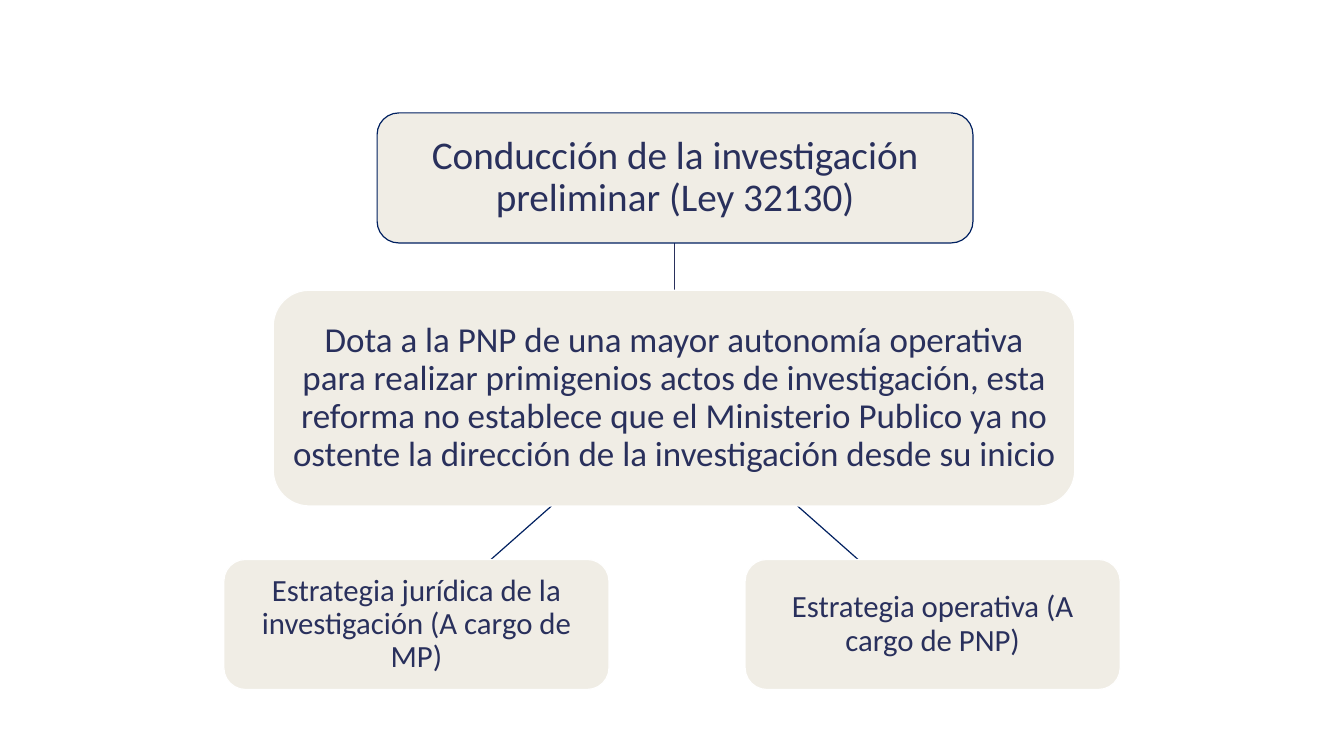
from pptx import Presentation
from pptx.dml.color import RGBColor
from pptx.enum.shapes import MSO_CONNECTOR as Link, MSO_SHAPE as Shape
from pptx.enum.text import MSO_ANCHOR as Anchor, PP_ALIGN as Align
from pptx.util import Inches, Pt
from lxml import etree

# Content: text, (left, top, width, height), border, size, inset
INK, NAVY, SAND, WHITE = "29305C", "002060", "F0EDE5", "FFFFFF"
BOXES = [
    ("Dota a la PNP de una mayor autonomía operativa para realizar "
     "primigenios actos de investigación, esta reforma no establece que el "
     "Ministerio Publico ya no ostente la dirección de la investigación "
     "desde su inicio", (2.71, 2.88, 7.95, 2.14), WHITE, 25, 0.07),
    ("Conducción de la investigación preliminar (Ley 32130)",
     (3.74, 1.12, 5.91, 1.29), NAVY, 28, 0.08),
    ("Estrategia operativa (A cargo de PNP)",
     (7.39, 5.55, 3.72, 1.29), WHITE, 22, 0.06),
    ("Estrategia jurídica de la investigación (A cargo de MP)",
     (2.22, 5.55, 3.82, 1.29), WHITE, 22, 0.06),
]
# Links: start, end, colour
LINKS = [
    ((6.69, 2.4), (6.69, 2.88), INK),
    ((7.91, 5.02), (8.51, 5.55), NAVY),
    ((5.47, 5.02), (4.87, 5.55), NAVY),
]
EDGE = Pt(0.85)
DML = "http://schemas.openxmlformats.org/drawingml/2006/main"


def color(code):
    return RGBColor.from_string(code)


def write(frame, text, size, inset, font="Calibri", ink=INK):
    frame.word_wrap = True
    frame.vertical_anchor = Anchor.MIDDLE
    frame.margin_left = frame.margin_right = Inches(inset)
    frame.margin_top = frame.margin_bottom = Inches(inset)
    para = frame.paragraphs[0]
    para.alignment = Align.CENTER
    para.line_spacing = 0.9
    run = para.add_run()
    run.text = text
    run.font.name, run.font.size = font, Pt(size)
    run.font.color.rgb = color(ink)


def stroke(line, code):
    line.color.rgb = color(code)
    line.width = EDGE


deck = Presentation()
deck.slide_width, deck.slide_height = Inches(13.33), Inches(7.5)
slide = deck.slides.add_slide(deck.slide_layouts[6])

# Lines between the levels
for start, end, code in LINKS:
    link = slide.shapes.add_connector(
        Link.STRAIGHT, *map(Inches, start + end))
    stroke(link.line, code)
    etree.SubElement(link._element.spPr, f"{{{DML}}}effectLst")

# Boxes of the tree
for text, place, edge, size, inset in BOXES:
    box = slide.shapes.add_shape(
        Shape.ROUNDED_RECTANGLE, *map(Inches, place))
    box.shadow.inherit = False
    box.fill.solid()
    box.fill.fore_color.rgb = color(SAND)
    stroke(box.line, edge)
    write(box.text_frame, text, size, inset)

deck.save("out.pptx")
